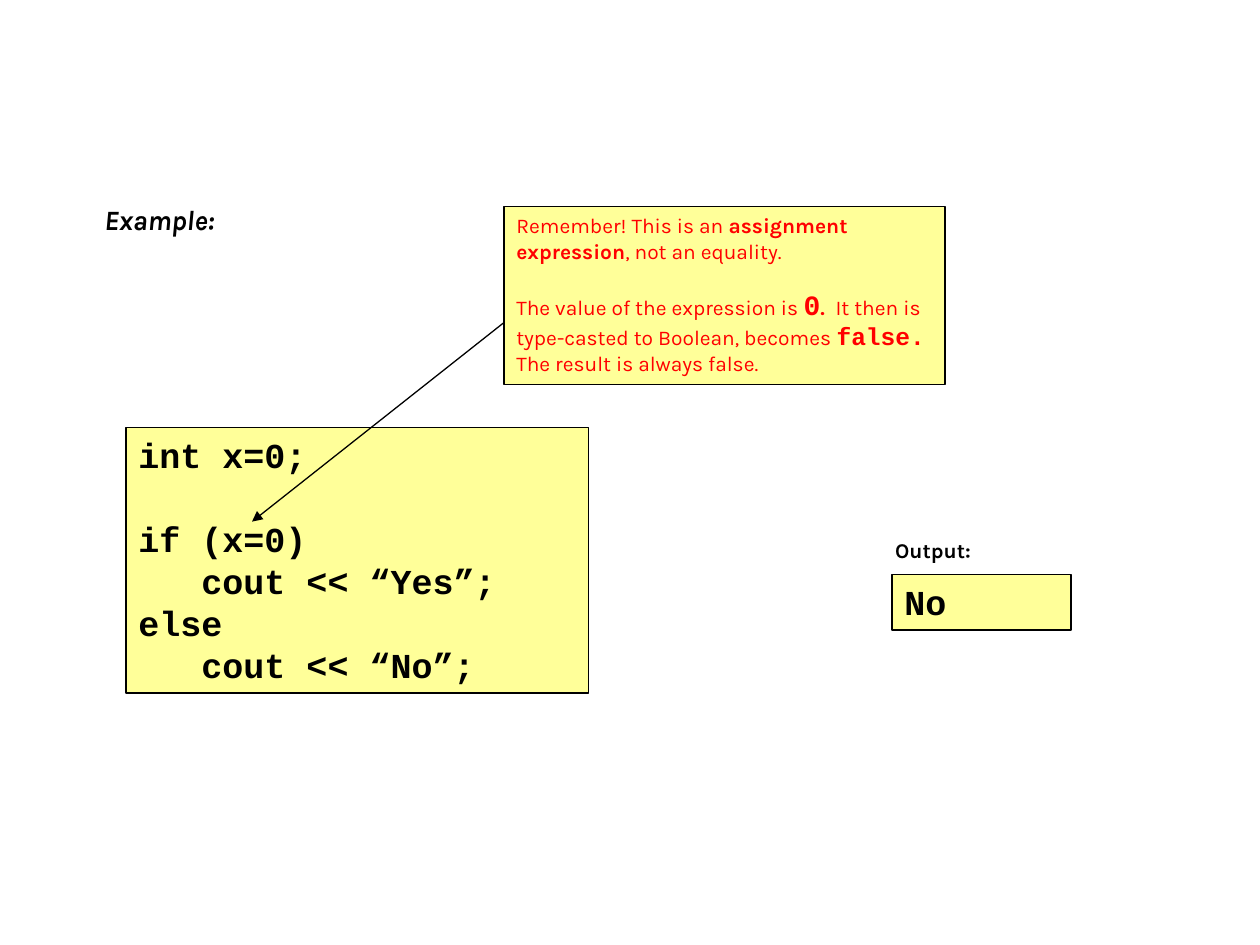
import pptx
import pptx.util
import pptx.dml.color
import pptx.enum.shapes
import pptx.enum.text
import pptx.oxml
import pptx.oxml.ns
from pptx.util import Inches, Pt

BLACK = pptx.dml.color.RGBColor(0x00, 0x00, 0x00)
RED = pptx.dml.color.RGBColor(0xFF, 0x00, 0x00)
YELLOW = pptx.dml.color.RGBColor(0xFF, 0xFF, 0x99)
CODE_FONT = "Courier New"
TEXT_FONT = "Karla"

deck = pptx.Presentation()
deck.slide_width = Inches(10)
deck.slide_height = Inches(7.5)
page = deck.slides.add_slide(deck.slide_layouts[6])


def add_box(left, top, width, height):
    box = page.shapes.add_shape(
        pptx.enum.shapes.MSO_SHAPE.RECTANGLE,
        Inches(left), Inches(top), Inches(width), Inches(height))
    box.shadow.inherit = False
    box.fill.solid()
    box.fill.fore_color.rgb = YELLOW
    box.line.color.rgb = BLACK
    box.line.width = Pt(0.75)
    box.text_frame.word_wrap = True
    box.text_frame.vertical_anchor = pptx.enum.text.MSO_ANCHOR.TOP
    return box


def set_font(font, name, size, color, bold):
    font.name = name
    font.size = Pt(size)
    font.color.rgb = color
    font.bold = bold


# Headings
for text, left, top, width, height, size, italic in [
    ("Example:", 0.67, 1.56, 1.19, 0.37, 16, True),
    ("Output:", 7, 4.22, 0.81, 0.3, 12, False),
]:
    box = page.shapes.add_textbox(Inches(left), Inches(top), Inches(width), Inches(height))
    box.text_frame.word_wrap = False
    para = box.text_frame.paragraphs[0]
    para.text = text
    para.alignment = pptx.enum.text.PP_ALIGN.CENTER
    set_font(para.font, TEXT_FONT, size, BLACK, True)
    para.font.italic = italic

# Code and its output
code_lines = ["int x=0;", "if (x=0)", "   cout << “Yes”;", "else", "   cout << “No”;"]
for lines, place in [
    (code_lines, (1, 3.39, 3.67, 2.11)),
    (["No"], (7.08, 4.56, 1.42, 0.44)),
]:
    frame = add_box(*place).text_frame
    frame.text = "\n".join(lines)
    for para in frame.paragraphs:
        para.alignment = pptx.enum.text.PP_ALIGN.LEFT
        para.line_spacing = Pt(24)
        set_font(para.font, CODE_FONT, 20, BLACK, True)
        if para.text.startswith("if"):
            para.space_before = Pt(24)

# Note on the assignment: text, font, size, bold
note = add_box(4, 1.64, 3.5, 1.41).text_frame
note_paragraphs = [
    [
        ("Remember! This is an ", TEXT_FONT, 12, False),
        ("assignment expression", TEXT_FONT, 12, True),
        (", not an equality.", TEXT_FONT, 12, False),
    ],
    [
        ("The value of the expression is ", TEXT_FONT, 12, False),
        ("0", CODE_FONT, 16, True),
        (".  ", TEXT_FONT, 12, True),
        ("It then is type-casted to Boolean, becomes ", TEXT_FONT, 12, False),
        ("false. ", CODE_FONT, 14, True),
        ("The result is always false.", TEXT_FONT, 12, False),
    ],
]
for index, spans in enumerate(note_paragraphs):
    para = note.add_paragraph() if index else note.paragraphs[0]
    para.alignment = pptx.enum.text.PP_ALIGN.LEFT
    if index:
        para.space_before = Pt(14)
    for text, name, size, bold in spans:
        span = para.add_run()
        span.text = text
        set_font(span.font, name, size, RED, bold)

# Arrow from the note to the condition
arrow = page.shapes.add_connector(
    pptx.enum.shapes.MSO_CONNECTOR.STRAIGHT,
    Inches(4), Inches(2.56), Inches(2), Inches(4.14))
arrow.line.color.rgb = BLACK
arrow.line.width = Pt(0.75)
tail = pptx.oxml.parse_xml(
    '<a:tailEnd %s type="triangle"/>' % pptx.oxml.ns.nsdecls("a"))
arrow.line._get_or_add_ln().append(tail)
arrow._element.spPr.append(
    pptx.oxml.parse_xml("<a:effectLst %s/>" % pptx.oxml.ns.nsdecls("a")))

deck.save("out.pptx")
